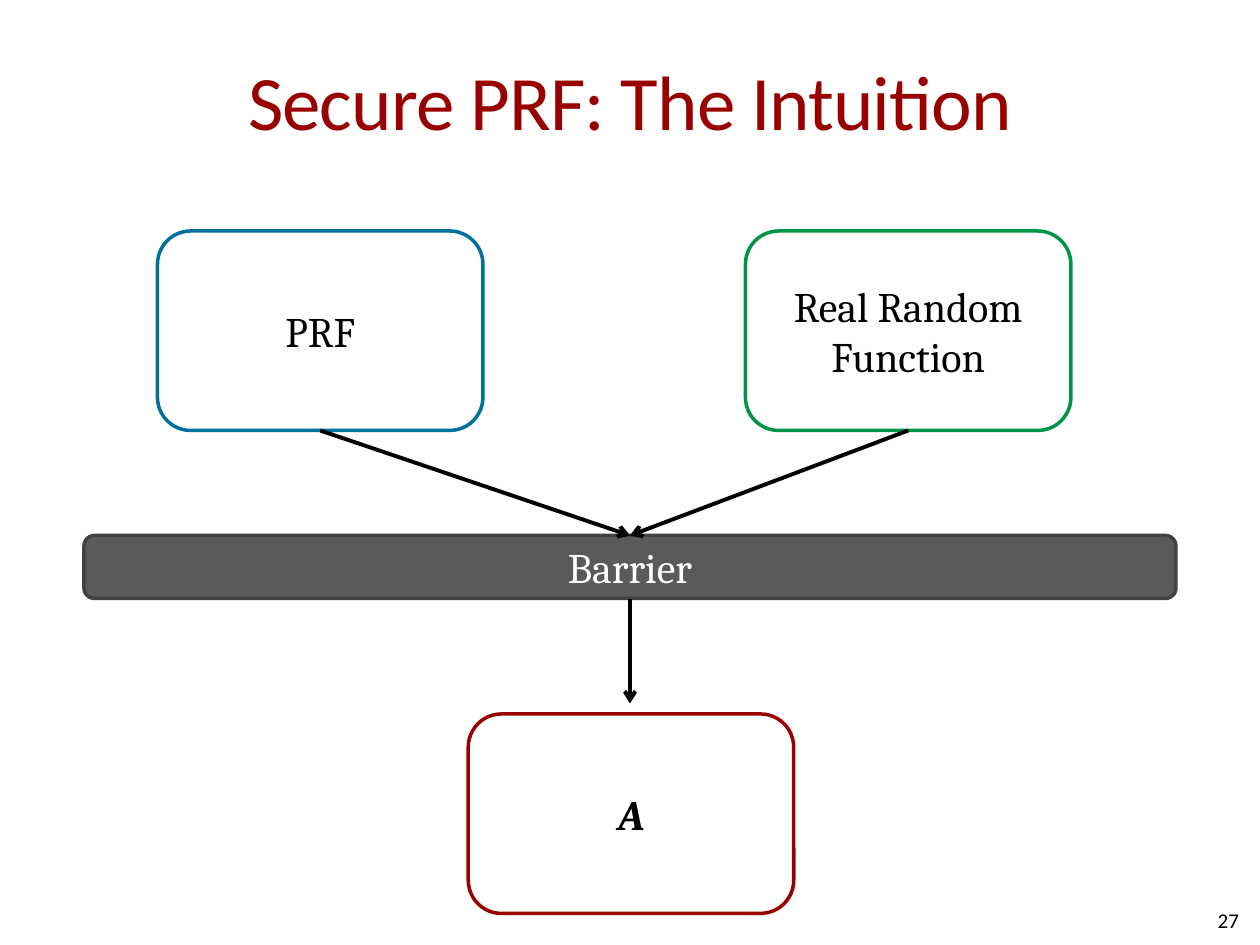
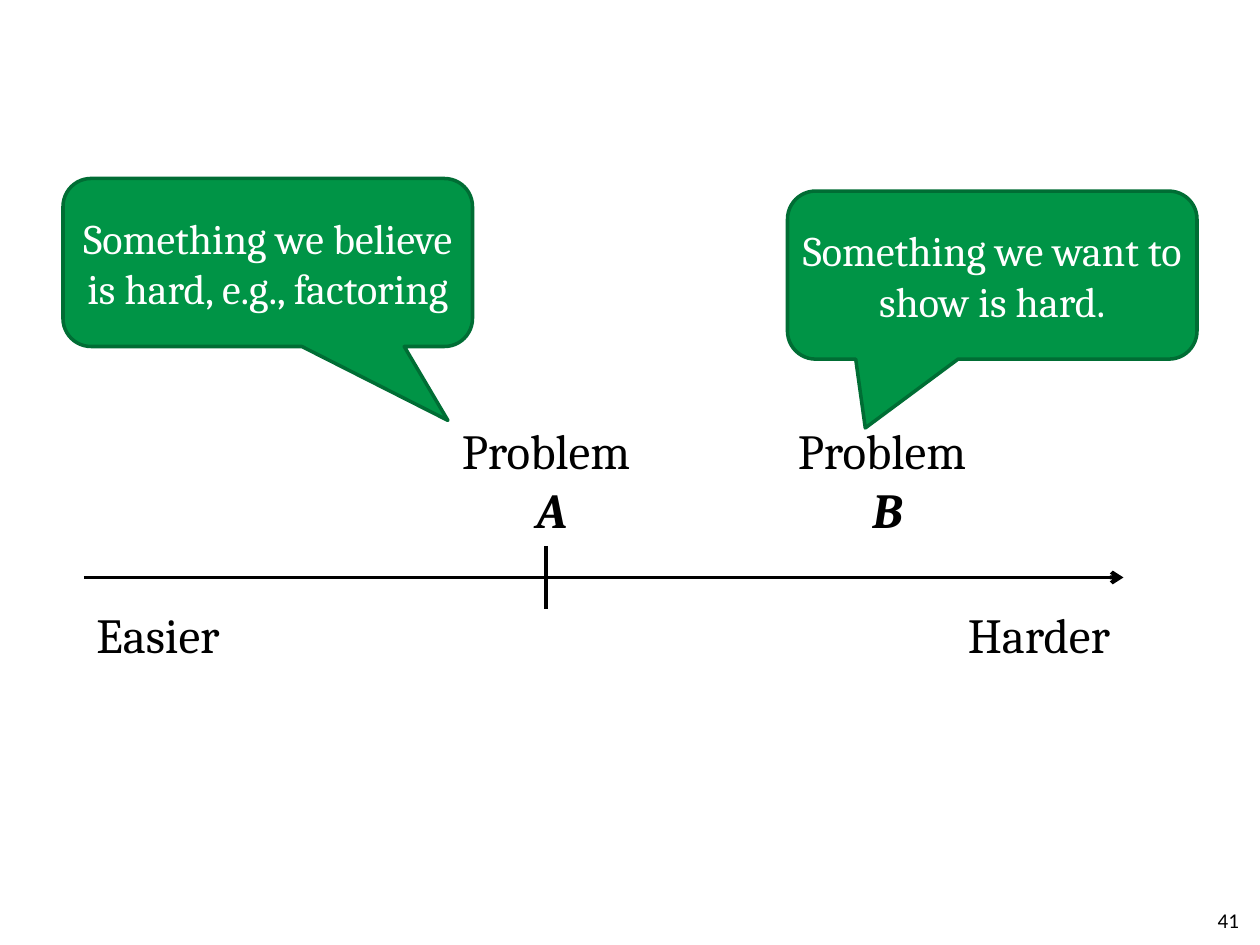
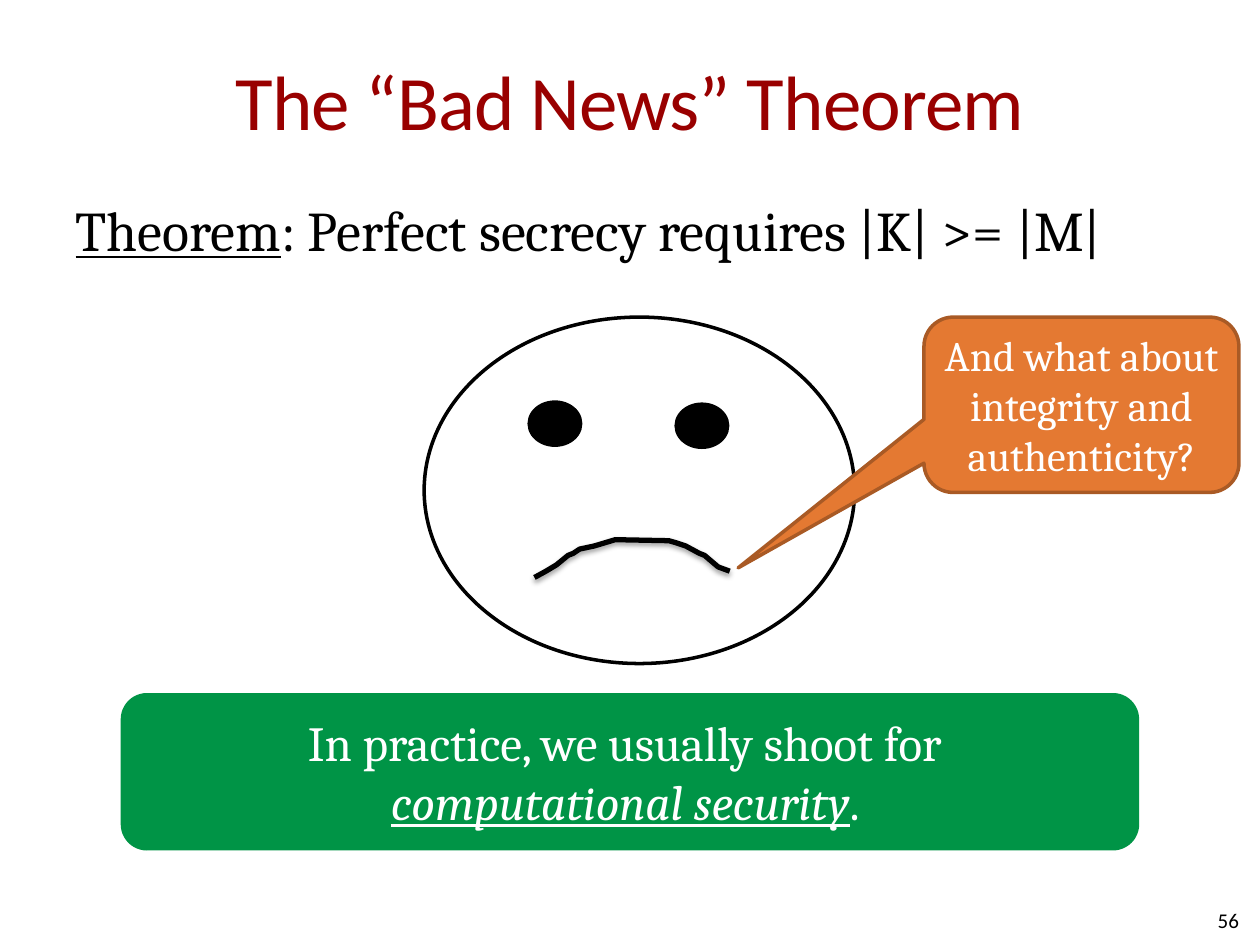
from lxml.etree import SubElement as Sub
from pptx import Presentation
from pptx.dml.color import RGBColor
from pptx.enum.shapes import MSO_CONNECTOR as Link, MSO_SHAPE as Kind
from pptx.enum.text import MSO_ANCHOR as Anchor, MSO_AUTO_SIZE as Fit, PP_ALIGN as Align
from pptx.oxml.ns import qn
from pptx.util import Pt

SCALE = 7620
BLACK, WHITE, RED = "000000", "FFFFFF", "990000"
GREEN, MOSS, BLUE = "009446", "006D34", "00709E"
GRAY, SLATE = "595A5A", "424343"
AMBER, RUST = "E47932", "A95A25"
HEAD, BODY = "Calibri", "Cambria"
CARD = (310, 190)
CALL = (390, 160)


def emu(*nums):
    return [num * SCALE for num in nums]


def rgb(code):
    return RGBColor.from_string(code)


class Deck:
    """Hold the shared style and the slide being drawn."""

    def __init__(self):
        self.show = Presentation()
        self.show.slide_width, self.show.slide_height = emu(1200, 900)

    def page(self, num, title=None, lead=None):
        layout = 6 if title is None else 1 if lead else 5
        self.slide = self.show.slides.add_slide(self.show.slide_layouts[layout])
        self.shapes = self.slide.shapes
        if title:
            self.title(title)
        if lead:
            self.lead(lead)
        self.text(num, (900, 852, 280, 48), 12, HEAD, Align.RIGHT, Anchor.MIDDLE, (0, 0), True)

    def label(self, item, runs, size, face=BODY, color=BLACK, align=Align.CENTER,
              anchor=Anchor.MIDDLE, pad=(0, 0), wrap=True):
        frame = item.text_frame
        frame.auto_size, frame.word_wrap = Fit.NONE, wrap
        frame.vertical_anchor = anchor
        frame.margin_left, frame.margin_top = emu(*pad)
        frame.margin_right, frame.margin_bottom = emu(*pad)
        para = frame.paragraphs[0]
        para.alignment = align
        font = para.font
        font.name, font.size, font.color.rgb = face, Pt(size), rgb(color)
        for words, marks in [(runs, "")] if isinstance(runs, str) else runs:
            for nth, line in enumerate(words.split("\n")):
                if nth:
                    para.add_line_break()
                run = para.add_run()
                run.text = line
                run.font.bold = "b" in marks or None
                run.font.italic = "i" in marks or None
                run.font.underline = "u" in marks or None
        return para

    def place(self, item, box):
        item.left, item.top, item.width, item.height = emu(*box)

    def title(self, words):
        item = self.shapes.title
        self.place(item, (60, 20, 1080, 150))
        para = self.label(item, words, 44, HEAD, RED, pad=(0, 6))
        para.runs[0]._r.get_or_add_rPr().set("spc", "-50")

    def lead(self, runs):
        item = self.slide.placeholders[1]
        self.place(item, (60, 180, 1080, 240))
        para = self.label(item, runs, 32, align=Align.LEFT, anchor=Anchor.TOP, pad=(12, 6))
        props = para._p.get_or_add_pPr()
        props.set("marL", "0")
        props.set("indent", "0")
        props.insert(0, props.makeelement(qn("a:buNone")))

    def text(self, runs, box, size=28, face=BODY, align=Align.LEFT,
             anchor=Anchor.TOP, pad=(12, 6), wrap=False):
        item = self.shapes.add_textbox(*emu(*box))
        self.label(item, runs, size, face, BLACK, align, anchor, pad, wrap)

    def shape(self, box, fill, edge=None, runs=None, ink=WHITE, size=24,
              kind=Kind.ROUNDED_RECTANGLE, tip=()):
        item = self.shapes.add_shape(kind, *emu(*box))
        item.shadow.inherit = False
        item.fill.solid()
        item.fill.fore_color.rgb = rgb(fill)
        if edge:
            item.line.color.rgb, item.line.width = rgb(edge), Pt(2)
        else:
            item.line.fill.background()
        for nth, value in enumerate(tip):
            item.adjustments[nth] = value
        if runs:
            self.label(item, runs, size, color=ink)
        return item

    def card(self, spot, edge, runs):
        return self.shape(spot + CARD, WHITE, edge, runs, BLACK)

    def call(self, box, fill, edge, words, tip):
        self.shape(box, fill, edge, words, kind=Kind.ROUNDED_RECTANGULAR_CALLOUT, tip=tip)

    def oval(self, box, fill):
        self.shape(box, fill, BLACK, kind=Kind.OVAL)

    def line(self, ends=(0, 0, 0, 0), start=None, stop=None, arrow=True):
        item = self.shapes.add_connector(Link.STRAIGHT, *emu(*ends))
        item.line.color.rgb, item.line.width = rgb(BLACK), Pt(2.25)
        if start:
            item.begin_connect(start, 2)
        if stop:
            item.end_connect(stop, 0)
        if arrow:
            Sub(item.line._get_or_add_ln(), qn("a:tailEnd"), type="arrow")
        Sub(item._element.spPr, qn("a:effectLst"))

    def curve(self, spots):
        pen = self.shapes.build_freeform(*spots[0], scale=SCALE)
        pen.add_line_segments(spots[1:], close=False)
        item = pen.convert_to_shape()
        item.fill.background()
        item.line.color.rgb, item.line.width = rgb(BLACK), Pt(3)
        item.shadow.inherit = False
        glow = Sub(item._element.spPr.find(qn("a:effectLst")), qn("a:outerShdw"),
                   blurRad=str(Pt(3.1)), dist=str(Pt(1.6)), dir="5400000", rotWithShape="0")
        tone = Sub(glow, qn("a:srgbClr"), val=BLACK)
        Sub(tone, qn("a:alpha"), val="38000")

    def group(self):
        self.shapes = self.slide.shapes.add_group_shape().shapes

    def leave(self):
        self.shapes = self.slide.shapes


def barrier(deck):
    deck.page("27", "Secure PRF: The Intuition")
    tops = [deck.card((150, 220), BLUE, "PRF"),
            deck.card((710, 220), GREEN, "Real Random Function")]
    wall = deck.shape((80, 510, 1040, 60), GRAY, SLATE, "Barrier")
    for top in tops:
        deck.line(start=top, stop=wall)
    deck.line((600, 570, 600, 670), start=wall)
    deck.card((446, 680), RED, [("A", "bi")])


def scale(deck):
    deck.page("41")
    deck.line((80, 550, 1070, 550))
    for word, left in (("Easier", 80), ("Harder", 910)):
        deck.text(word, (left, 570, 120, 120))
    deck.line((520, 520, 520, 580), arrow=False)
    for name, left, spot, words, tip in (
            ("A", 450, (60, 170), "Something we believe is hard, e.g., factoring", (0.44, 0.94)),
            ("B", 770, (750, 182), "Something we want to show is hard.", (-0.31, 0.91))):
        deck.text([("Problem\n ", ""), (name, "bi")], (left, 395, 140, 145), align=Align.CENTER)
        deck.call(spot + CALL, GREEN, MOSS, words, tip)


def theorem(deck):
    deck.page("56", "The “Bad News” Theorem",
              [("Theorem", "u"), (": Perfect secrecy requires |K| >= |M|", "")])
    deck.group()
    deck.oval((404, 302, 410, 330), WHITE)
    for spot in ((504, 383), (644, 385)):
        deck.oval(spot + (49, 41), BLACK)
    deck.curve([(509, 550), (520, 544), (530, 538), (541, 529), (546, 527),
                (552, 523), (566, 520), (586, 514), (637, 515), (644, 517),
                (653, 520), (666, 527), (671, 529), (684, 540), (695, 544)])
    deck.leave()
    deck.shape((115, 660, 970, 150), GREEN, size=28,
               runs=[("In practice, we usually shoot for \n", ""),
                     ("computational security", "iu"), (". ", "")])
    deck.call((880, 302, 300, 167), AMBER, RUST,
              "And what about integrity and authenticity?", (-1.09, 0.93))


def main():
    deck = Deck()
    for draw in (barrier, scale, theorem):
        draw(deck)
    deck.show.save("out.pptx")


if __name__ == "__main__":
    main()
